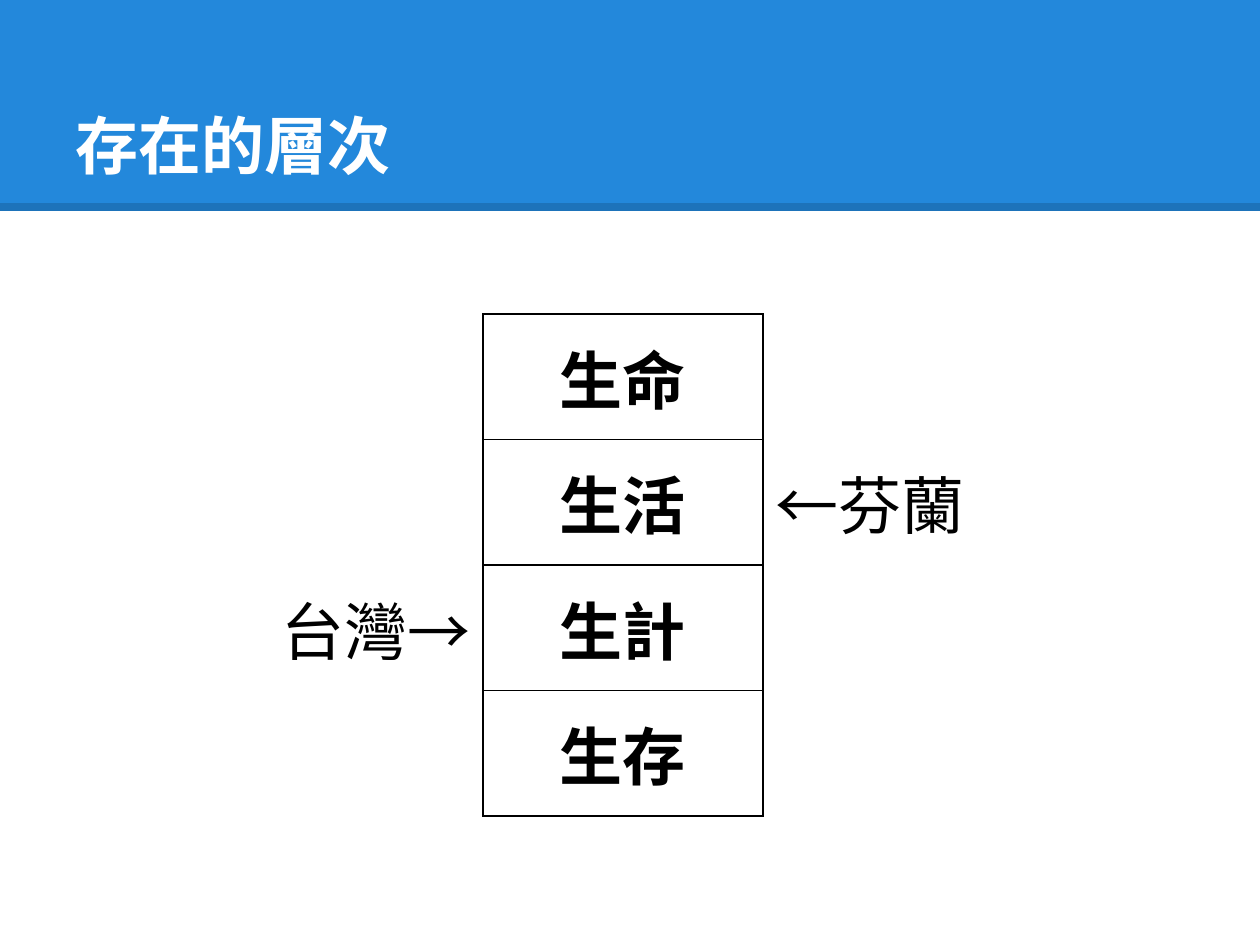
from dataclasses import dataclass

from lxml import etree
from pptx import Presentation
from pptx.dml.color import RGBColor
from pptx.enum.shapes import MSO_CONNECTOR, MSO_SHAPE
from pptx.enum.text import MSO_ANCHOR, MSO_AUTO_SIZE, PP_ALIGN
from pptx.oxml.ns import qn
from pptx.util import Pt

STRAIGHT = MSO_CONNECTOR.STRAIGHT
RECTANGLE = MSO_SHAPE.RECTANGLE
BOTTOM, MIDDLE = MSO_ANCHOR.BOTTOM, MSO_ANCHOR.MIDDLE
FIXED_SIZE = MSO_AUTO_SIZE.NONE
LEFT, CENTER, RIGHT = PP_ALIGN.LEFT, PP_ALIGN.CENTER, PP_ALIGN.RIGHT

PX_PER_INCH = 126
SLIDE_WIDTH, SLIDE_HEIGHT = 1260, 945
TITLE_ONLY_LAYOUT = 5
SIDES = ("L", "R", "T", "B")


@dataclass(frozen=True)
class Theme:
    font: str = "Arial"
    size: int = 36
    band: str = "2388DB"
    ink: str = "000000"
    paper: str = "FFFFFF"
    rule_width: float = 4.5
    rule_opacity: int = 15
    border_width: float = 1


def px(length):
    return round(length * 914400 / PX_PER_INCH)


class SlideBuilder:
    def __init__(self, slide, theme):
        self.slide = slide
        self.theme = theme

    def style(self, paragraph, color, bold, align):
        paragraph.alignment = align
        font = paragraph.font
        font.name = self.theme.font
        font.size = Pt(self.theme.size)
        font.bold = bold
        font.color.rgb = RGBColor.from_string(color)

    def band(self, left, top, width, height):
        band = self.slide.shapes.add_shape(
            RECTANGLE, px(left), px(top), px(width), px(height))
        band.shadow.inherit = False
        band.fill.solid()
        band.fill.fore_color.rgb = RGBColor.from_string(self.theme.band)
        band.line.fill.background()

    def rule(self, left, right, y):
        """Draw a translucent horizontal line."""
        rule = self.slide.shapes.add_connector(
            STRAIGHT, px(left), px(y), px(right), px(y))
        rule.line.width = Pt(self.theme.rule_width)
        rule.line.color.rgb = RGBColor.from_string(self.theme.ink)
        properties = rule._element.spPr
        ink = properties.find(".//" + qn("a:srgbClr"))
        etree.SubElement(ink, qn("a:alpha"), val=str(self.theme.rule_opacity * 1000))
        etree.SubElement(properties, qn("a:effectLst"))

    def title(self, wording, left, top, width, height):
        title = self.slide.shapes.title
        # The title placeholder must lie in front of the band.
        self.slide.shapes._spTree.append(title._element)
        title.left, title.top = px(left), px(top)
        title.width, title.height = px(width), px(height)
        frame = title.text_frame
        frame.text = wording
        frame.auto_size = FIXED_SIZE
        frame.vertical_anchor = BOTTOM
        frame.margin_left = frame.margin_right = Pt(7.2)
        frame.margin_top = frame.margin_bottom = Pt(7.2)
        self.style(frame.paragraphs[0], self.theme.paper, True, LEFT)

    def borders(self, cell, visible_sides):
        properties = cell._tc.get_or_add_tcPr()
        for side in SIDES:
            border = etree.SubElement(
                properties, qn("a:ln" + side), w=str(Pt(self.theme.border_width)))
            if side in visible_sides:
                fill = etree.SubElement(border, qn("a:solidFill"))
                etree.SubElement(fill, qn("a:srgbClr"), val=self.theme.ink)
            else:
                etree.SubElement(border, qn("a:noFill"))

    def levels(self, rows, left, top, width, height):
        """Add a table whose boxed middle column has open notes on both sides."""
        columns = (("R", RIGHT, False), (SIDES, CENTER, True), ("L", LEFT, False))
        table = self.slide.shapes.add_table(
            len(rows), len(columns), px(left), px(top), px(width), px(height)).table
        table.first_row = table.horz_banding = False
        for row, wordings in enumerate(rows):
            for column, (visible_sides, align, bold) in enumerate(columns):
                cell = table.cell(row, column)
                self.borders(cell, visible_sides)
                cell.fill.background()
                cell.vertical_anchor = MIDDLE
                cell.text = wordings[column]
                self.style(cell.text_frame.paragraphs[0], self.theme.ink, bold, align)


def main():
    presentation = Presentation()
    presentation.slide_width = px(SLIDE_WIDTH)
    presentation.slide_height = px(SLIDE_HEIGHT)
    layout = presentation.slide_layouts[TITLE_ONLY_LAYOUT]
    builder = SlideBuilder(presentation.slides.add_slide(layout), Theme())

    builder.band(0, 0, SLIDE_WIDTH, 211)
    builder.rule(0, SLIDE_WIDTH, 207)
    builder.title("存在的層次", 63, 38, 1134, 157)
    builder.levels(
        [
            ("", "生命", ""),
            ("", "生活", "←芬蘭"),
            ("台灣→", "生計", ""),
            ("", "生存", ""),
        ],
        203, 314, 840, 502)
    presentation.save("out.pptx")


if __name__ == "__main__":
    main()
